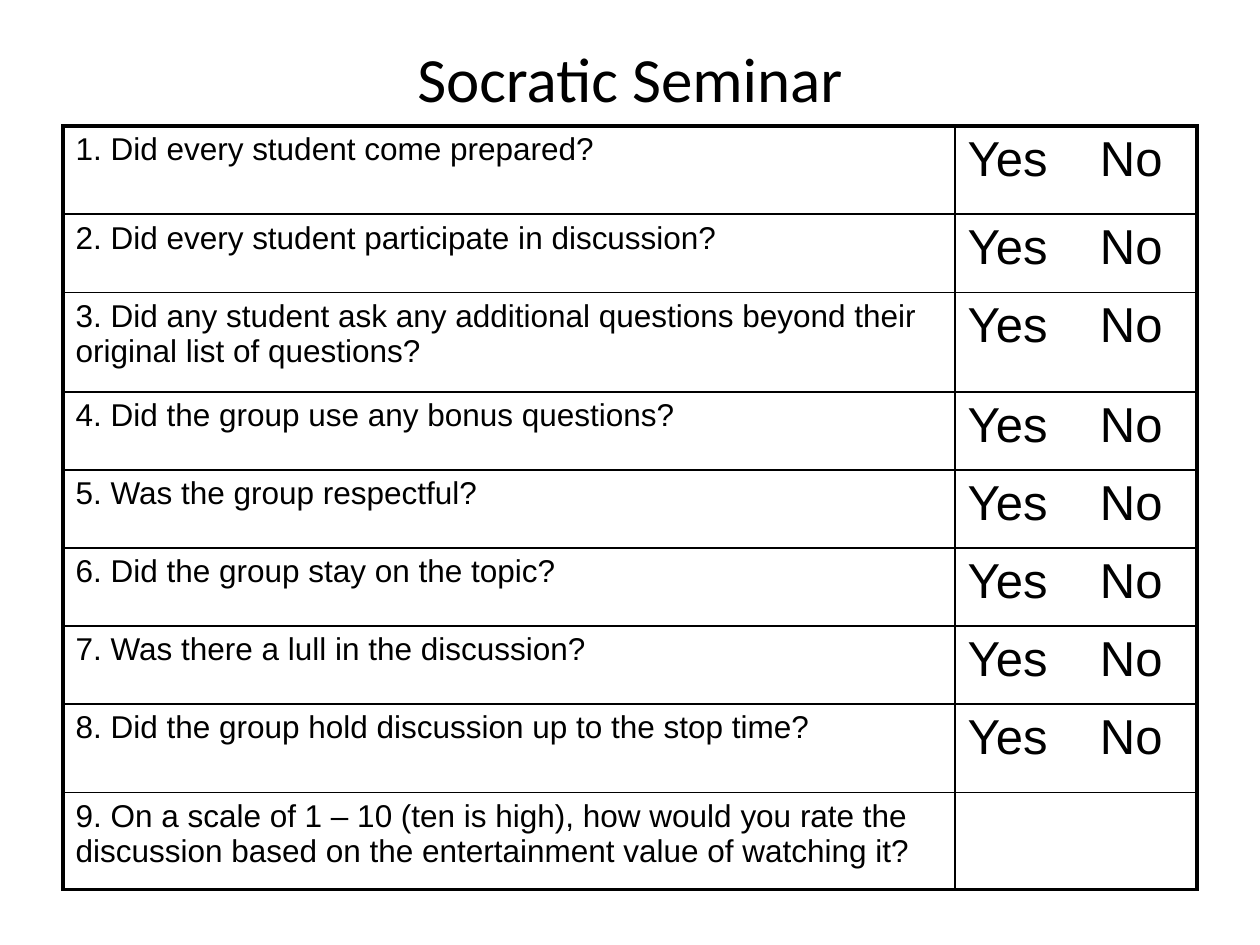
from dataclasses import dataclass

from lxml import etree
from pptx import Presentation
from pptx.dml.color import RGBColor
from pptx.enum.text import MSO_ANCHOR, PP_ALIGN
from pptx.oxml.ns import qn
from pptx.util import Inches, Pt

CENTER = PP_ALIGN.CENTER
MIDDLE = MSO_ANCHOR.MIDDLE
TITLE_ONLY = 5


@dataclass(frozen=True)
class Theme:
    ink: str = "000000"
    title_font: str = "Calibri"
    body_font: str = "Arial"
    title_size: float = 36
    question_size: float = 18
    answer_size: float = 28
    outer_line: float = 2.25
    inner_line: float = 1


THEME = Theme()

# Questions with their row heights in inches
QUESTIONS = [
    ("1. Did every student come prepared?", 0.7),
    ("2. Did every student participate in discussion?", 0.62),
    ("3. Did any student ask any additional questions beyond their "
     "original list of questions?", 0.79),
    ("4. Did the group use any bonus questions?", 0.62),
    ("5. Was the group respectful?", 0.62),
    ("6. Did the group stay on the topic?", 0.62),
    ("7. Was there a lull in the discussion?", 0.62),
    ("8. Did the group hold discussion up to the stop time?", 0.7),
    ("9. On a scale of 1 – 10 (ten is high), how would you rate the "
     "discussion based on the entertainment value of watching it?", 0.77),
]
COLUMN_WIDTHS = [7.08, 1.92]


def add_text(paragraph, text, font, size):
    run = paragraph.add_run()
    run.text = text
    run.font.name = font
    run.font.size = Pt(size)
    run.font.color.rgb = RGBColor.from_string(THEME.ink)


def add_border(cell, side, width):
    line = etree.SubElement(cell._tc.get_or_add_tcPr(), qn(f"a:ln{side}"), w=str(Pt(width)))
    fill = etree.SubElement(line, qn("a:solidFill"))
    etree.SubElement(fill, qn("a:srgbClr"), val=THEME.ink)


prs = Presentation()
prs.slide_width = Inches(10)
prs.slide_height = Inches(7.5)
slide = prs.slides.add_slide(prs.slide_layouts[TITLE_ONLY])

# Title
title = slide.shapes.title
title.left, title.top = Inches(0.5), Inches(0.3)
title.width, title.height = Inches(9), Inches(0.62)
title.text_frame.vertical_anchor = MIDDLE
heading = title.text_frame.paragraphs[0]
heading.alignment = CENTER
add_text(heading, "Socratic Seminar", THEME.title_font, THEME.title_size)

# Checklist table
last_row, last_column = len(QUESTIONS) - 1, len(COLUMN_WIDTHS) - 1
total_height = sum(height for _, height in QUESTIONS)
checklist = slide.shapes.add_table(
    len(QUESTIONS), len(COLUMN_WIDTHS),
    Inches(0.5), Inches(1), Inches(sum(COLUMN_WIDTHS)), Inches(total_height)).table
checklist.first_row = False
checklist.horz_banding = False
for column, width in zip(checklist.columns, COLUMN_WIDTHS):
    column.width = Inches(width)

for row, (question, height) in enumerate(QUESTIONS):
    checklist.rows[row].height = Inches(height)
    answer = "Yes\tNo" if row < last_row else ""
    entries = [(question, THEME.question_size), (answer, THEME.answer_size)]
    for column, (text, size) in enumerate(entries):
        cell = checklist.cell(row, column)

        # Heavy lines on the table's outline, thin ones inside
        on_outline = {"L": column == 0, "R": column == last_column,
                      "T": row == 0, "B": row == last_row}
        for side, outer in on_outline.items():
            add_border(cell, side, THEME.outer_line if outer else THEME.inner_line)
        cell.fill.background()

        if not text:
            continue
        paragraph = cell.text_frame.paragraphs[0]
        properties = paragraph._p.get_or_add_pPr()
        before = etree.SubElement(properties, qn("a:spcBef"))
        etree.SubElement(before, qn("a:spcPct"), val="20000")
        if column == last_column:
            # The tab stop sets "No" apart from "Yes"
            tabs = etree.SubElement(properties, qn("a:tabLst"))
            etree.SubElement(tabs, qn("a:tab"), pos=str(Inches(1.05)), algn="l")
        add_text(paragraph, text, THEME.body_font, size)

prs.save("out.pptx")
